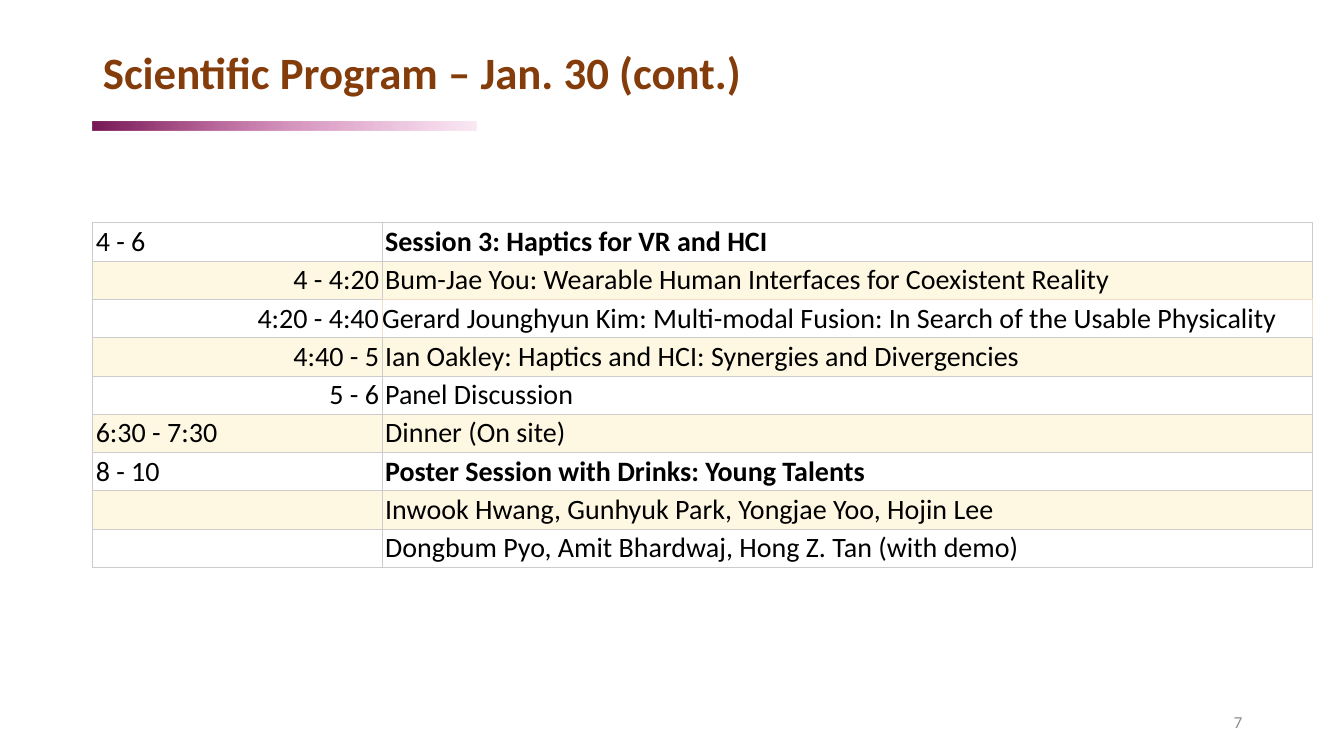
"""Build the conference program slide with its session timetable."""
from lxml.etree import SubElement
from pptx import Presentation
from pptx.dml.color import RGBColor
from pptx.enum.shapes import MSO_SHAPE
from pptx.enum.text import MSO_ANCHOR, PP_ALIGN
from pptx.oxml.ns import qn
from pptx.util import Pt

EMU_PER_PX = 9144
COLORS = {
    "title": "843C0B",
    "text": "000000",
    "number": "8C8C8C",
    "white": "FFFFFF",
    "cream": "FEF8E3",
    "grid": "CCCCCC",
    "tan": "F0DFC6",
}
BAR_STOPS = [(0, "771A55", 100), (50, "A92579", 50), (100, "C82C90", 10)]
COLUMN_WIDTHS = [287, 923]
ROW_HEIGHT = 37
PROGRAM = [
    ("4 - 6", "Session 3: Haptics for VR and HCI"),
    ("4 - 4:20", "Bum-Jae You: Wearable Human Interfaces for Coexistent Reality"),
    ("4:20 - 4:40", "Gerard Jounghyun Kim: Multi-modal Fusion: In Search of the Usable Physicality"),
    ("4:40 - 5", "Ian Oakley: Haptics and HCI: Synergies and Divergencies"),
    ("5 - 6", "Panel Discussion"),
    ("6:30 - 7:30", "Dinner (On site)"),
    ("8 - 10", "Poster Session with Drinks: Young Talents"),
    ("", "Inwook Hwang, Gunhyuk Park, Yongjae Yoo, Hojin Lee"),
    ("", "Dongbum Pyo, Amit Bhardwaj, Hong Z. Tan (with demo)"),
]
TALK_ROWS = range(1, 5)
SESSION_ROWS = (0, 6)
FLUSH_CELL = (2, 1)
TAN_EDGES = {(1, 1): "B", (2, 0): "R", (2, 1): "LRT"}


def px(length):
    return length * EMU_PER_PX


def style_paragraph(para, size, color, bold=False, align=PP_ALIGN.LEFT):
    para.alignment = align
    para.font.name = "Calibri"
    para.font.size = Pt(size)
    para.font.bold = bold
    para.font.color.rgb = RGBColor.from_string(COLORS[color])


def add_title(page, text):
    title = page.shapes.title
    title.left, title.top, title.width, title.height = map(px, (92, 40, 1150, 68))
    frame = title.text_frame
    frame.text = text
    frame.vertical_anchor = MSO_ANCHOR.MIDDLE
    para = frame.paragraphs[0]
    para.line_spacing = 0.9
    style_paragraph(para, 32, "title", bold=True)


def add_gradient_bar(page):
    bar = page.shapes.add_shape(MSO_SHAPE.RECTANGLE, *map(px, (92, 121, 381, 8)))
    bar.shadow.inherit = False
    bar.line.fill.background()
    bar.fill.gradient()
    bar.fill.gradient_angle = 0
    stops = bar._element.spPr.find(".//" + qn("a:gsLst"))
    stops.clear()
    for position, color, opacity in BAR_STOPS:
        stop = SubElement(stops, qn("a:gs"), pos=str(position * 1000))
        tone = SubElement(stop, qn("a:srgbClr"), val=color)
        SubElement(tone, qn("a:alpha"), val=str(opacity * 1000))


def set_borders(cell, tan_edges):
    properties = cell._tc.get_or_add_tcPr()
    for edge in "LRTB":
        line = SubElement(properties, qn("a:ln" + edge), w=str(Pt(0.6)))
        fill = SubElement(line, qn("a:solidFill"))
        color = COLORS["tan" if edge in tan_edges else "grid"]
        SubElement(fill, qn("a:srgbClr"), val=color)


def fill_cell(cell, row, column, text):
    side = 0 if (row, column) == FLUSH_CELL else px(3)
    cell.margin_left = cell.margin_right = side
    cell.margin_top = cell.margin_bottom = px(2)
    cell.vertical_anchor = MSO_ANCHOR.BOTTOM
    set_borders(cell, TAN_EDGES.get((row, column), ""))
    cell.fill.solid()
    cell.fill.fore_color.rgb = RGBColor.from_string(COLORS["cream" if row % 2 else "white"])
    cell.text = text
    is_talk_time = column == 0 and row in TALK_ROWS
    style_paragraph(
        cell.text_frame.paragraphs[0], 20, "text",
        bold=column == 1 and row in SESSION_ROWS,
        align=PP_ALIGN.RIGHT if is_talk_time else PP_ALIGN.LEFT,
    )


def add_program_table(page):
    size = (sum(COLUMN_WIDTHS), ROW_HEIGHT * len(PROGRAM))
    table = page.shapes.add_table(
        len(PROGRAM), len(COLUMN_WIDTHS), px(92), px(221), *map(px, size)
    ).table
    table.first_row = table.horz_banding = False
    for column, width in zip(table.columns, COLUMN_WIDTHS):
        column.width = px(width)
    for row, entry in enumerate(PROGRAM):
        for column, text in enumerate(entry):
            fill_cell(table.cell(row, column), row, column, text)


def add_page_number(page, number):
    box = page.shapes.add_textbox(*map(px, (1130, 696, 112, 40)))
    frame = box.text_frame
    frame.word_wrap = True
    frame.vertical_anchor = MSO_ANCHOR.MIDDLE
    frame.text = number
    style_paragraph(frame.paragraphs[0], 12, "number", align=PP_ALIGN.RIGHT)


def main():
    deck = Presentation()
    deck.slide_width, deck.slide_height = px(1333), px(750)
    page = deck.slides.add_slide(deck.slide_layouts[5])
    add_gradient_bar(page)
    add_title(page, "Scientific Program – Jan. 30 (cont.)")
    add_program_table(page)
    add_page_number(page, "7")
    deck.save("out.pptx")


if __name__ == "__main__":
    main()
